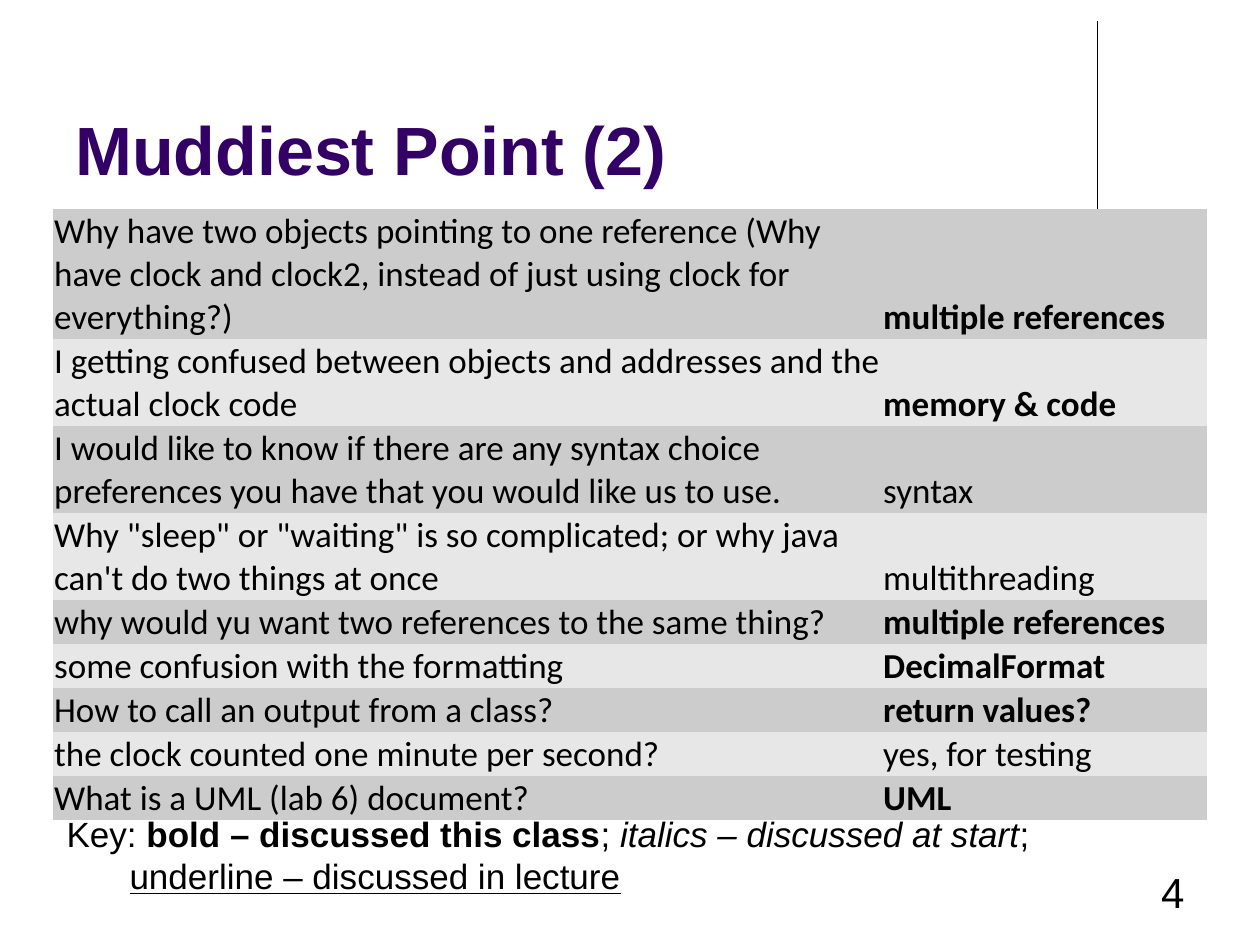
from lxml import etree
from pptx import Presentation
from pptx.dml.color import RGBColor
from pptx.enum.shapes import MSO_CONNECTOR
from pptx.enum.text import MSO_ANCHOR, PP_ALIGN
from pptx.oxml.ns import qn
from pptx.util import Inches, Pt

COLORS = {"text": "000000", "title": "330066", "odd": "CCCCCC", "even": "E7E7E7"}
NO_STYLE = "{2D5ABB26-0587-4C30-8999-92F81FD0307C}"
LINE_HEIGHT = 0.34

# question, answer, lines of text, discussed this class
QUESTIONS = [
    ("Why have two objects pointing to one reference (Why have clock and clock2, "
     "instead of just using clock for everything?)", "multiple references", 3, True),
    ("I getting confused between objects and addresses and the actual clock code",
     "memory & code", 2, True),
    ("I would like to know if there are any syntax choice preferences you have "
     "that you would like us to use.", "syntax", 2, False),
    ("Why \"sleep\" or \"waiting\" is so complicated; or why java can't do two "
     "things at once", "multithreading", 2, False),
    ("why would yu want two references to the same thing?", "multiple references", 1, True),
    ("some confusion with the formatting", "DecimalFormat", 1, True),
    ("How to call an output from a class?", "return values?", 1, True),
    ("the clock counted one minute per second?", "yes, for testing", 1, False),
    ("What is a UML (lab 6) document?", "UML", 1, True),
]


def rgb(name):
    return RGBColor.from_string(COLORS[name])


def add_run(p, text, size, name="Arial", color="text", **style):
    r = p.add_run()
    r.text = text
    r.font.color.rgb = rgb(color)
    for key, value in {"size": Pt(size), "name": name, **style}.items():
        setattr(r.font, key, value)


def add_text_box(s, x, y, w, h, anchor=MSO_ANCHOR.TOP, wrap=True):
    """Add an empty text box and return its first paragraph."""
    tf = s.shapes.add_textbox(Inches(x), Inches(y), Inches(w), Inches(h)).text_frame
    tf.word_wrap = wrap
    tf.vertical_anchor = anchor
    return tf.paragraphs[0]


def add_rule(s, x, top, bottom):
    line = s.shapes.add_connector(
        MSO_CONNECTOR.STRAIGHT, Inches(x), Inches(top), Inches(x), Inches(bottom))
    line.line.color.rgb = rgb("text")
    line.line.width = Pt(0.75)
    etree.SubElement(line.element.spPr, qn("a:effectLst"))


def add_title(s, x, y, w, h):
    p = add_text_box(s, x, y, w, h, MSO_ANCHOR.BOTTOM)
    add_run(p, "Muddiest Point (2)", 39, color="title", bold=True)


def fill_cell(cell, text, fill, bold):
    margins = dict.fromkeys(("margin_left", "margin_right", "margin_top"), Inches(0.01))
    settings = {**margins, "margin_bottom": 0, "vertical_anchor": MSO_ANCHOR.BOTTOM}
    for key, value in settings.items():
        setattr(cell, key, value)
    cell.fill.solid()
    cell.fill.fore_color.rgb = rgb(fill)
    add_run(cell.text_frame.paragraphs[0], text, 20, "Calibri", bold=bold)


def add_questions(s, x, y, widths):
    heights = [LINE_HEIGHT * lines + 0.01 for _, _, lines, _ in QUESTIONS]
    frame = s.shapes.add_table(len(QUESTIONS), len(widths), Inches(x), Inches(y),
                               Inches(sum(widths)), Inches(sum(heights)))
    next(frame.element.iter(qn("a:tableStyleId"))).text = NO_STYLE
    table = frame.table
    table.first_row = table.horz_banding = False
    for column, width in zip(table.columns, widths):
        column.width = Inches(width)
    for i, (question, answer, _, discussed) in enumerate(QUESTIONS):
        table.rows[i].height = Inches(heights[i])
        fill = "even" if i % 2 else "odd"
        fill_cell(table.cell(i, 0), question, fill, False)
        fill_cell(table.cell(i, 1), answer, fill, discussed)


def add_key(s, x, y, w, h):
    p = add_text_box(s, x, y, w, h, wrap=False)
    add_run(p, "Key: ", 20)
    add_run(p, "bold – discussed this class", 20, bold=True)
    add_run(p, "; ", 20)
    add_run(p, "italics – discussed at start", 20, italic=True)
    add_run(p, ";", 20)
    p.add_line_break()
    add_run(p, "\t", 20)
    add_run(p, "underline – discussed in lecture", 20, underline=True)


def add_page_number(s, x, y, w, h):
    p = add_text_box(s, x, y, w, h)
    p.alignment = PP_ALIGN.RIGHT
    add_run(p, "4", 24)


def main():
    prs = Presentation()
    prs.slide_width, prs.slide_height = Inches(10), Inches(7.5)
    s = prs.slides.add_slide(prs.slide_layouts[6])
    add_rule(s, 8.71, 0.17, 1.83)
    add_title(s, 0.5, 0.13, 8.25, 1.42)
    add_questions(s, 0.42, 1.66, (6.58, 2.58))
    add_page_number(s, 7.17, 6.83, 2.33, 0.5)
    add_key(s, 0.43, 6.4, 7.97, 1.11)
    prs.save("out.pptx")


if __name__ == "__main__":
    main()
